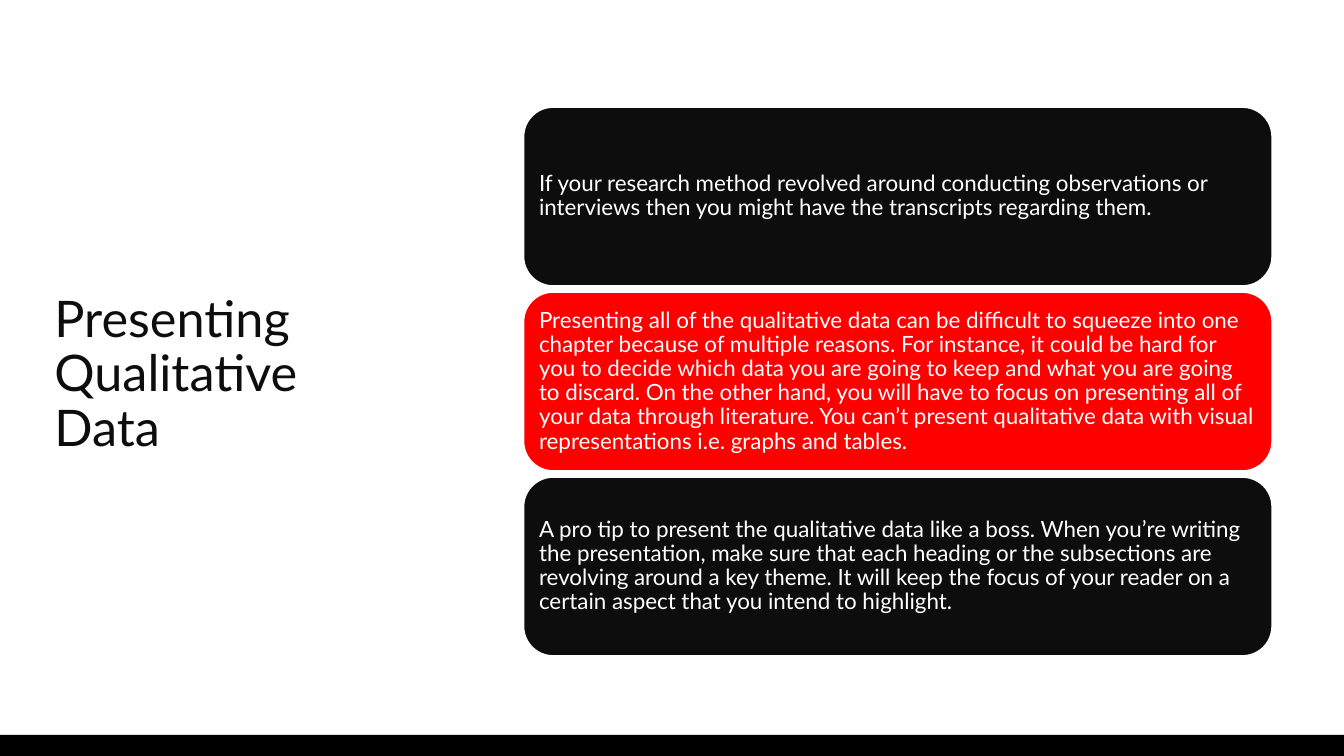
import pptx
import pptx.dml.color
import pptx.enum.shapes
import pptx.enum.text
import pptx.util

WIDTH, HEIGHT = 13.33, 7.5
COLORS = {"ink": "0D0D0D", "accent": "FF0000", "white": "FFFFFF", "footer": "000000"}
TITLE = "Presenting Qualitative Data"
CARDS = [
    ("ink", "If your research method revolved around conducting observations or interviews "
            "then you might have the transcripts regarding them."),
    ("accent", "Presenting all of the qualitative data can be difficult to squeeze into one "
               "chapter because of multiple reasons. For instance, it could be hard for you to "
               "decide which data you are going to keep and what you are going to discard. On "
               "the other hand, you will have to focus on presenting all of your data through "
               "literature. You can’t present qualitative data with visual representations "
               "i.e. graphs and tables."),
    ("ink", "A pro tip to present the qualitative data like a boss. When you’re writing the "
            "presentation, make sure that each heading or the subsections are revolving around "
            "a key theme. It will keep the focus of your reader on a certain aspect that you "
            "intend to highlight."),
]


def rgb(name):
    return pptx.dml.color.RGBColor.from_string(COLORS[name])


def inches(box):
    return [pptx.util.Inches(v) for v in box]


def write(sp, text, size, color, inset_x, inset_y):
    tf = sp.text_frame
    tf.word_wrap = True
    tf.vertical_anchor = pptx.enum.text.MSO_ANCHOR.MIDDLE
    tf.margin_left = tf.margin_right = pptx.util.Inches(inset_x)
    tf.margin_top = tf.margin_bottom = pptx.util.Inches(inset_y)
    p = tf.paragraphs[0]
    p.alignment = pptx.enum.text.PP_ALIGN.LEFT
    p.line_spacing = 0.9
    r = p.add_run()
    r.text = text
    r.font.name = "Lato"
    r.font.size = pptx.util.Pt(size)
    r.font.color.rgb = rgb(color)


def add_block(s, kind, box, fill):
    sp = s.shapes.add_shape(kind, *inches(box))
    sp.shadow.inherit = False
    sp.fill.solid()
    sp.fill.fore_color.rgb = rgb(fill)
    sp.line.fill.background()
    return sp


def add_footer(s, box):
    add_block(s, pptx.enum.shapes.MSO_SHAPE.RECTANGLE, box, "footer")


def add_title(s, box):
    write(s.shapes.add_textbox(*inches(box)), TITLE, 36, "ink", 0, 0.05)


def add_cards(s, box, gap=0.055):
    """Stack the cards in equal rows that fill the box."""
    left, top, width, height = box
    row = (height - gap * (len(CARDS) - 1)) / len(CARDS)
    for i, (fill, text) in enumerate(CARDS):
        card = (left, top + i * (row + gap), width, row)
        sp = add_block(s, pptx.enum.shapes.MSO_SHAPE.ROUNDED_RECTANGLE, card, fill)
        sp.line.color.rgb = rgb("white")
        sp.line.width = pptx.util.Pt(1.5)
        write(sp, text, 16, "white", 0.07, 0.07)


def main():
    prs = pptx.Presentation()
    prs.slide_width, prs.slide_height = inches((WIDTH, HEIGHT))
    s = prs.slides.add_slide(prs.slide_layouts[6])
    add_footer(s, (0, HEIGHT - 0.21, WIDTH, 0.21))
    add_title(s, (0.54, 0.57, 3.37, 6.31))
    add_cards(s, (5.19, 1.06, 7.43, 5.45))
    prs.save("out.pptx")


if __name__ == "__main__":
    main()
